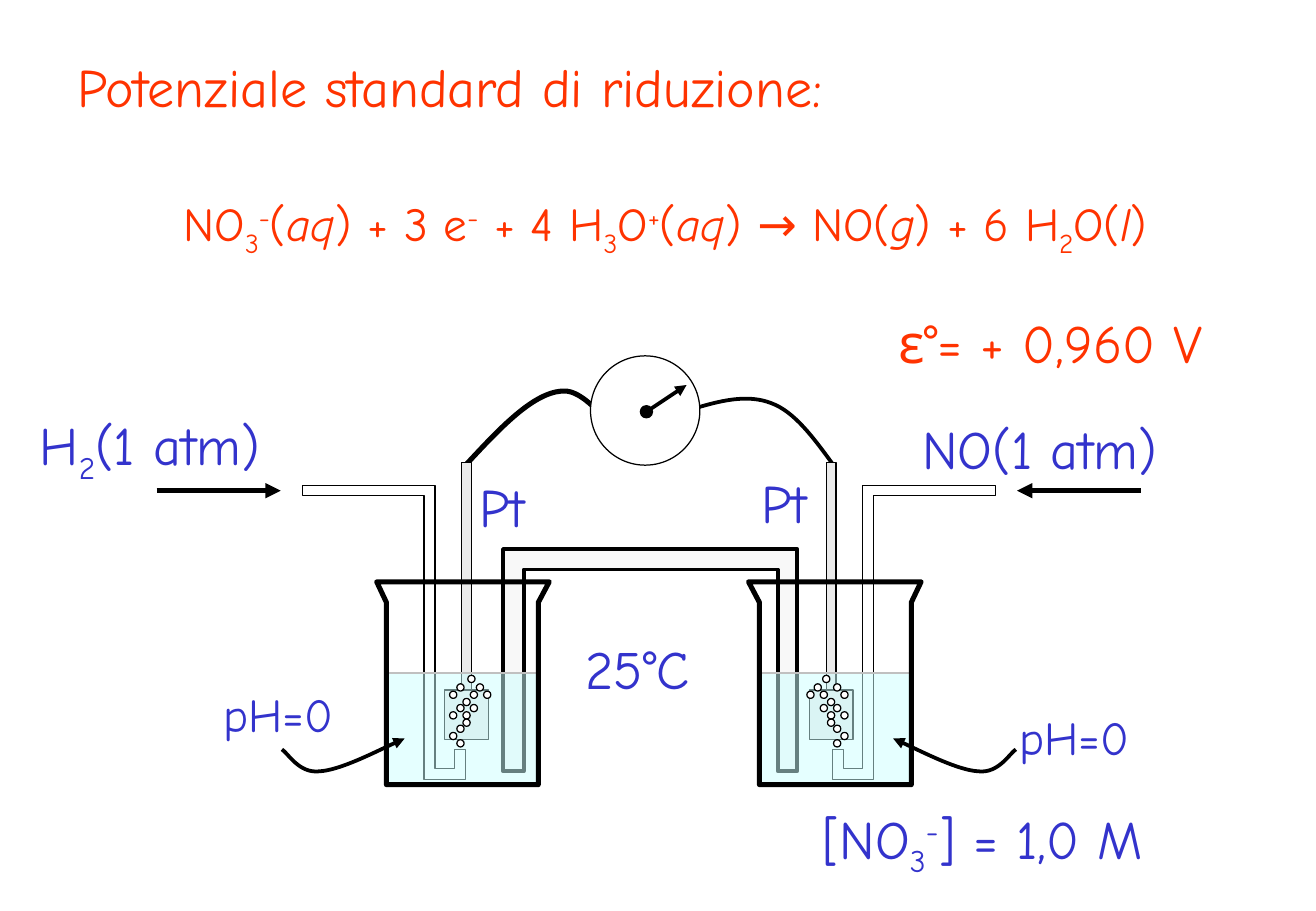
from lxml.etree import SubElement
from pptx import Presentation
from pptx.dml.color import RGBColor
from pptx.enum.shapes import MSO_CONNECTOR, MSO_SHAPE
from pptx.enum.text import MSO_ANCHOR, MSO_AUTO_SIZE, PP_ALIGN
from pptx.oxml.ns import qn
from pptx.util import Pt

PX = 9144  # 100 px to the inch
MIRROR = 1068  # left x + right x of the two half-cells
FONT = "Comic Neue"
RED = RGBColor(0xFF, 0x33, 0x00)
BLUE = RGBColor(0x33, 0x33, 0xCC)
BLACK = RGBColor(0x00, 0x00, 0x00)
WHITE = RGBColor(0xFF, 0xFF, 0xFF)
SILVER = RGBColor(0xC0, 0xC0, 0xC0)
PLATINUM = RGBColor(0xEA, 0xEA, 0xEA)
BRIDGE = RGBColor(0xF8, 0xF8, 0xF8)
WATER = RGBColor(0xCC, 0xFF, 0xFF)
OVAL, RECT = MSO_SHAPE.OVAL, MSO_SHAPE.RECTANGLE

prs = Presentation()
prs.slide_width, prs.slide_height = 1083 * PX, 750 * PX
s = prs.slides.add_slide(prs.slide_layouts[5])


def write(box, *runs, size=32, color=BLUE, align=PP_ALIGN.LEFT, wrap=False, sp=None):
    """Write runs in a box; a leading _ ^ or / makes a run sub, super or italic."""
    box = [v * PX for v in box]
    if sp is None:
        sp = s.shapes.add_textbox(*box)
    sp.left, sp.top, sp.width, sp.height = box
    tf = sp.text_frame
    tf.word_wrap = wrap
    tf.auto_size = MSO_AUTO_SIZE.SHAPE_TO_FIT_TEXT
    tf.vertical_anchor = MSO_ANCHOR.TOP
    p = tf.paragraphs[0]
    p.alignment = align
    for run in runs:
        mark = run[0] if run[0] in "_^/" else ""
        r = p.add_run()
        r.text = run[len(mark):]
        r.font.name, r.font.size, r.font.color.rgb = FONT, Pt(size), color
        if mark == "/":
            r.font.italic = True
        elif mark:
            r._r.get_or_add_rPr().set("baseline", "-25000" if mark == "_" else "30000")


def draw(kind, points, fill=None, line=BLACK, width=0.75, alpha=None, arrow=False):
    """Draw a preset between two corners, or a line, curve or polygon through points."""
    pts = [(x * PX, y * PX) for x, y in points]
    (x1, y1), (x2, y2) = pts[:2]
    if kind == "line":
        sp = s.shapes.add_connector(MSO_CONNECTOR.STRAIGHT, x1, y1, x2, y2)
    elif kind in ("curve", "polygon"):
        builder = s.shapes.build_freeform(x1, y1)
        builder.add_line_segments(pts[1:], close=kind == "polygon")
        sp = builder.convert_to_shape()
    else:
        sp = s.shapes.add_shape(kind, min(x1, x2), y1, abs(x2 - x1), y2 - y1)
    sp.line.color.rgb, sp.line.width = line, Pt(width)
    if arrow:
        SubElement(sp.line._get_or_add_ln(), qn("a:tailEnd"), type="triangle")
    if kind == "line":
        SubElement(sp._element.spPr, qn("a:effectLst"))
        return
    sp.shadow.inherit = False
    if fill is None:
        sp.fill.background()
    else:
        sp.fill.solid()
        sp.fill.fore_color.rgb = fill
    if alpha:
        color = next(sp._element.spPr.iter(qn("a:srgbClr")))
        SubElement(color, qn("a:alpha"), val=str(alpha * 1000))
    if kind == "curve":  # every three points become one Bezier segment
        segments = list(sp._element.iter(qn("a:lnTo")))
        for i in range(0, len(segments), 3):
            bezier = SubElement(segments[i].getparent(), qn("a:cubicBezTo"))
            for segment in segments[i:i + 3]:
                bezier.append(segment[0])
                segment.getparent().remove(segment)


write((54, 39, 698, 63), "Potenziale standard di riduzione:", color=RED, sp=s.shapes.title)
write((13, 155, 1069, 57), "NO", "_3", "^-", "(", "/aq", ") + 3 e", "^-", " + 4 H", "_3", "O",
      "^+", "(", "/aq", ") → NO(", "/g", ") + 6 H", "_2", "O(", "/l", ")",
      size=28, color=RED, align=PP_ALIGN.CENTER, wrap=True)
write((694, 250, 341, 63), "ε°= + 0,960 V", color=RED, align=PP_ALIGN.CENTER, wrap=True)

# Wires, salt bridge and voltmeter
draw("curve", [(569, 337), (592, 330), (615, 324), (635, 332),
               (654, 339), (670, 361), (686, 383)], width=2.25)
draw("polygon", [(414, 635), (431, 635), (431, 469), (640, 469), (640, 635),
                 (656, 635), (656, 452), (414, 452)], fill=BRIDGE, width=2.25)
draw("curve", [(384, 382), (411, 353), (438, 324), (462, 322), (486, 319),
               (511, 369), (529, 369), (547, 369), (560, 345), (572, 322)], width=3)
draw(OVAL, [(486, 293), (576, 383)], fill=WHITE)
draw("line", [(532, 339), (565, 317)], width=2.25, arrow=True)
draw(OVAL, [(527, 334), (537, 344)], fill=BLACK)

# One half-cell, drawn on the left and mirrored on the right
bubbles = [(381, 586), (387, 569), (370, 569), (381, 575), (376, 580), (398, 569),
           (370, 603), (376, 597), (387, 580), (392, 563), (376, 609), (370, 586),
           (376, 563), (381, 592), (385, 556)]
half_cell = [
    ("polygon", [(249, 400), (358, 400), (358, 633), (374, 633), (374, 617), (383, 617),
                 (383, 642), (349, 642), (349, 408), (249, 408)], dict(fill=WHITE)),
    (RECT, [(366, 568), (402, 609)], dict(fill=PLATINUM)),
    (RECT, [(380, 381), (388, 568)], dict(fill=PLATINUM)),
    (RECT, [(318, 554), (443, 646)], dict(fill=WATER, line=SILVER, alpha=50)),
    ("polygon", [(310, 479), (318, 496), (318, 646), (443, 646), (443, 496), (452, 479)],
     dict(width=3)),
    *[(OVAL, [(x, y), (x + 6, y + 6)], dict(fill=WHITE)) for x, y in bubbles],
    ("line", [(129, 404), (231, 404)], dict(width=3, arrow=True)),
    ("curve", [(232, 617), (237, 620), (246, 637), (263, 635), (280, 634), (319, 614),
               (333, 608)], dict(width=2.25, arrow=True)),
]
for mirrored in (False, True):
    for kind, points, style in half_cell:
        draw(kind, [(MIRROR - x if mirrored else x, y) for x, y in points], **style)

write((23, 334, 216, 63), "H", "_2", "(1 atm)")
write((749, 337, 235, 63), "NO(1 atm)")
write((385, 385, 64, 63), "Pt")
write((617, 382, 64, 63), "Pt")
write((472, 518, 119, 63), "25°C")
write((174, 559, 114, 57), "pH=0", size=28)
write((829, 578, 114, 57), "pH=0", size=28)
write((667, 658, 316, 63), "[NO", "_3", "^-", "] = 1,0 M")

prs.save("out.pptx")
